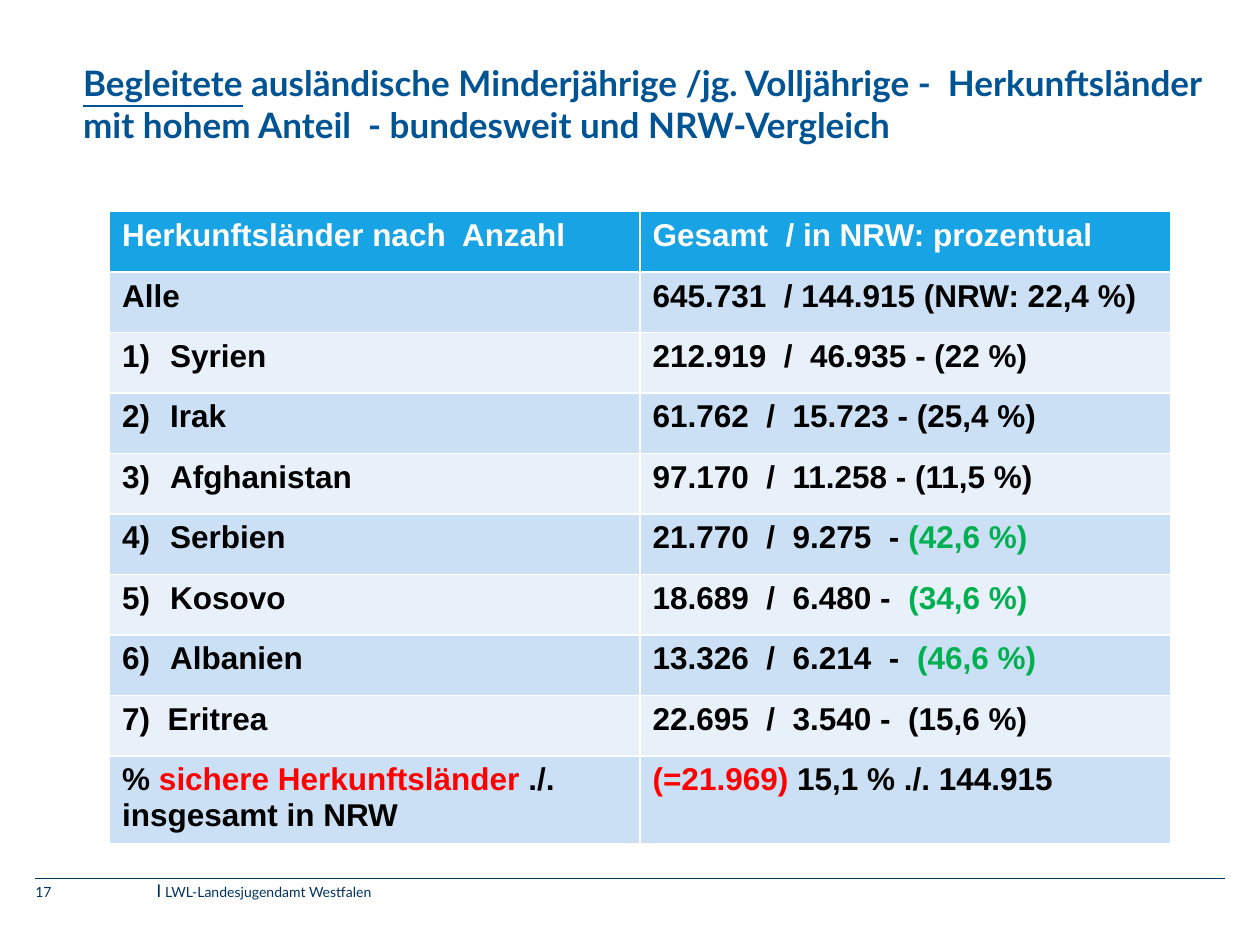
"""Builds the slide on countries of origin of accompanied foreign minors."""
from lxml import etree
from pptx import Presentation
from pptx.dml.color import RGBColor
from pptx.enum.shapes import MSO_CONNECTOR
from pptx.enum.text import MSO_ANCHOR, MSO_AUTO_SIZE, PP_ALIGN
from pptx.oxml.ns import qn
from pptx.util import Inches, Pt

STRAIGHT = MSO_CONNECTOR.STRAIGHT
TOP = MSO_ANCHOR.TOP
NO_AUTOFIT = MSO_AUTO_SIZE.NONE
LEFT = PP_ALIGN.LEFT

NAVY, BLUE, SKY = "00325F", "005493", "17A3E4"
BANDS = ["E8F0FA", "CCE0F5"]
WHITE, BLACK, GREEN, RED = "FFFFFF", "000000", "00B050", "FF0000"


def color(value):
    """Turns a hex string into a colour."""
    return RGBColor.from_string(value)


def write(paragraph, segments, font_name, size, bold=False):
    """Adds the coloured segments as runs of one paragraph."""
    for text, hex_color in segments:
        run = paragraph.add_run()
        run.text = text
        run.font.name = font_name
        run.font.size = Pt(size)
        run.font.bold = bold
        run.font.color.rgb = color(hex_color)


presentation = Presentation()
presentation.slide_width = Inches(10)
presentation.slide_height = Inches(7.5)
slide = presentation.slides.add_slide(presentation.slide_layouts[5])

title = slide.shapes.title
title.left, title.top = Inches(0.56), Inches(0.44)
title.width, title.height = Inches(9.09), Inches(1.11)
title_frame = title.text_frame
title_frame.word_wrap = True
title_frame.auto_size = NO_AUTOFIT
title_frame.vertical_anchor = TOP
title_frame.margin_right = 0
heading = title_frame.paragraphs[0]
heading.alignment = LEFT
write(heading, [
    ("Begleitete", BLUE),
    (" ausländische Minderjährige /jg. Volljährige -  Herkunftsländer "
     "mit hohem Anteil  - bundesweit und NRW-Vergleich", BLUE),
], "Lato", 20, True)
heading.runs[0].font.underline = True

rows = [
    ([("Herkunftsländer nach  Anzahl", WHITE)], [("Gesamt  / in NRW: prozentual", WHITE)]),
    ([("Alle", BLACK)], [("645.731  / 144.915 (NRW: 22,4 %)", BLACK)]),
    ([("Syrien", BLACK)], [("212.919  /  46.935 - (22 %)", BLACK)]),
    ([("Irak", BLACK)], [("61.762  /  15.723 - (25,4 %)", BLACK)]),
    ([("Afghanistan", BLACK)], [("97.170  /  11.258 - (11,5 %)", BLACK)]),
    ([("Serbien", BLACK)], [("21.770  /  9.275  - ", BLACK), ("(42,6 %)", GREEN)]),
    ([("Kosovo", BLACK)], [("18.689  /  6.480 -  ", BLACK), ("(34,6 %)", GREEN)]),
    ([("Albanien", BLACK)], [("13.326  /  6.214  -  ", BLACK), ("(46,6 %)", GREEN)]),
    ([("7)  Eritrea", BLACK)], [("22.695  /  3.540 -  (15,6 %)", BLACK)]),
    ([("% ", BLACK), ("sichere Herkunftsländer ", RED), ("./. insgesamt in NRW", BLACK)],
     [("(=21.969) ", RED), ("15,1 % ./. 144.915", BLACK)]),
]
NUMBERED_ROWS = range(2, 8)
ROW_HEIGHT, LAST_ROW_HEIGHT = 0.48, 0.7
table_height = ROW_HEIGHT * (len(rows) - 1) + LAST_ROW_HEIGHT
table = slide.shapes.add_table(
    len(rows), 2, Inches(0.87), Inches(1.68), Inches(8.42), Inches(table_height)).table

for row_index, row in enumerate(rows):
    is_last = row_index == len(rows) - 1
    table.rows[row_index].height = Inches(LAST_ROW_HEIGHT if is_last else ROW_HEIGHT)
    for column_index, segments in enumerate(row):
        cell = table.cell(row_index, column_index)
        cell.fill.solid()
        cell.fill.fore_color.rgb = color(BANDS[row_index % 2] if row_index else SKY)
        paragraph = cell.text_frame.paragraphs[0]
        if column_index == 0 and row_index in NUMBERED_ROWS:
            properties = paragraph._p.get_or_add_pPr()
            properties.set("marL", str(Inches(0.38)))
            properties.set("indent", str(-Inches(0.38)))
            etree.SubElement(properties, qn("a:buAutoNum"),
                             type="arabicParenR", startAt=str(row_index - 1))
        write(paragraph, segments, "Arial", 18, True)

footer_line = slide.shapes.add_connector(
    STRAIGHT, Inches(0.28), Inches(6.97), Inches(9.72), Inches(6.97))
footer_line.line.color.rgb = color(NAVY)
footer_line.line.width = Pt(0.5)
etree.SubElement(footer_line._element.spPr, qn("a:effectLst"))

footer_texts = [
    ("17", 0.28, 7.01, 0.28, 0.16, "Lato", 8),
    ("I", 1.24, 6.98, 0.11, 0.18, "Arial", 10.5),
    ("LWL-Landesjugendamt Westfalen", 1.31, 7.01, 7.25, 0.16, "Lato", 8),
]
for text, left, top, width, height, font_name, size in footer_texts:
    box = slide.shapes.add_textbox(Inches(left), Inches(top), Inches(width), Inches(height))
    frame = box.text_frame
    frame.word_wrap = True
    frame.margin_left = frame.margin_right = frame.margin_top = frame.margin_bottom = 0
    write(frame.paragraphs[0], [(text, NAVY)], font_name, size)

presentation.save("out.pptx")
